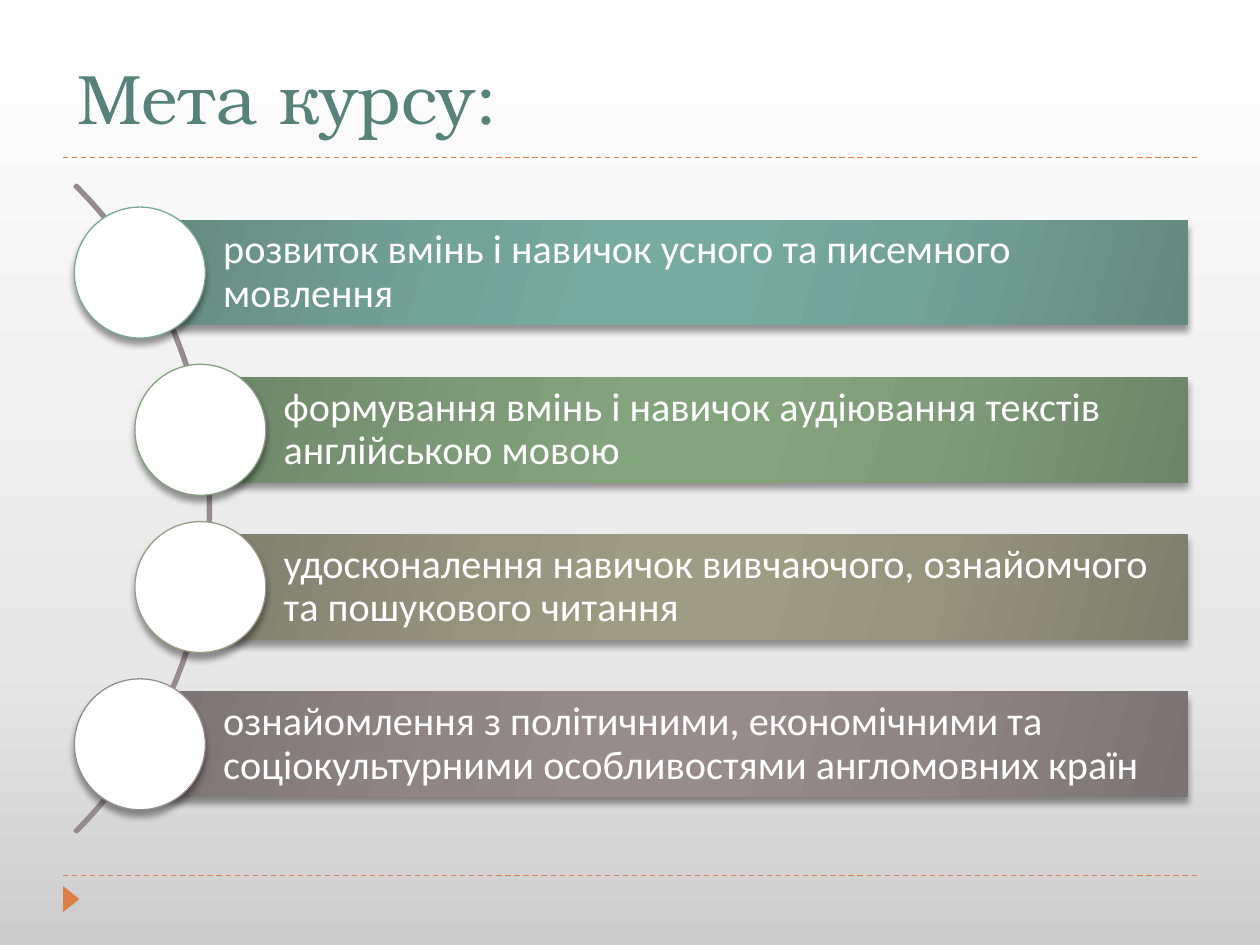
from dataclasses import dataclass

from lxml.etree import SubElement
from pptx import Presentation
from pptx.dml.color import RGBColor
from pptx.enum.dml import MSO_LINE
from pptx.enum.shapes import MSO_CONNECTOR, MSO_SHAPE
from pptx.enum.text import MSO_ANCHOR, MSO_AUTO_SIZE, PP_ALIGN
from pptx.oxml.ns import qn
from pptx.util import Cm, Pt

COLORS = {
    "title": "578279",
    "accent": "DD8047",
    "arc": "968C8C",
    "white": "FFFFFF",
    "shadow": "000000",
}
PAGE_STOPS = {0: "CCCCCC", 30: "E7E7E7", 100: "FFFFFF"}

# Lengths in centimetres
BAR_RIGHT, BAR_TOP, BAR_HEIGHT, BAR_PITCH = 23.95, 4.44, 2.11, 3.17
CIRCLE_SIZE = 2.64
OUTER_LEFT, INNER_LEFT = 2.82, 4.04


@dataclass
class Goal:
    text: str
    left: float
    edge: str
    middle: str
    center: str
    outline: str


GOALS = [
    Goal("розвиток вмінь і навичок усного та писемного мовлення",
         OUTER_LEFT, "658980", "73A297", "77AB9F", "7BA79D"),
    Goal("формування вмінь і навичок аудіювання текстів англійською мовою",
         INNER_LEFT, "6D8469", "7F9C79", "84A47E", "86A181"),
    Goal("удосконалення навичок вивчаючого, ознайомчого та пошукового читання",
         INNER_LEFT, "7F7E6E", "96947F", "9E9C84", "9C9A86"),
    Goal("ознайомлення з політичними, економічними та соціокультурними "
         "особливостями англомовних країн",
         OUTER_LEFT, "7B7373", "908585", "978B8B", "968C8C"),
]


def rgb(value: str) -> RGBColor:
    return RGBColor.from_string(value)


def apply_format(target, values: dict) -> None:
    for name, value in values.items():
        setattr(target, name, value)


def set_gradient(fill, owner, stops: dict, angle: int) -> None:
    fill.gradient()
    gradient = owner.xpath(".//a:gradFill")[0]
    stop_list = gradient.find(qn("a:gsLst"))
    for stop in list(stop_list):
        stop_list.remove(stop)
    for position, color in stops.items():
        stop = SubElement(stop_list, qn("a:gs"), pos=str(position * 1000))
        SubElement(stop, qn("a:srgbClr"), val=color)
    gradient.find(qn("a:lin")).set("ang", str(angle * 60000))


def add_shadow(shape) -> None:
    effects = shape._element.spPr.find(qn("a:effectLst"))
    shadow = SubElement(effects, qn("a:outerShdw"), blurRad=str(Pt(4)),
                        dist=str(Pt(3.4)), dir="5400000", rotWithShape="0")
    color = SubElement(shadow, qn("a:srgbClr"), val=COLORS["shadow"])
    SubElement(color, qn("a:alpha"), val="40000")


def add_plain_shape(page, kind, left: float, top: float, width: float, height: float,
                    fill: str = "", line: str = "", weight: float = 0.75):
    shape = page.shapes.add_shape(kind, Cm(left), Cm(top), Cm(width), Cm(height))
    shape.shadow.inherit = False
    if fill:
        shape.fill.solid()
        shape.fill.fore_color.rgb = rgb(fill)
    else:
        shape.fill.background()
    if line:
        shape.line.color.rgb = rgb(line)
        shape.line.width = Pt(weight)
    else:
        shape.line.fill.background()
    return shape


def add_rule(page, top: float) -> None:
    rule = page.shapes.add_connector(
        MSO_CONNECTOR.STRAIGHT, Cm(1.27), Cm(top), Cm(24.13), Cm(top))
    rule.line.color.rgb = rgb(COLORS["accent"])
    apply_format(rule.line, {"width": Pt(0.75), "dash_style": MSO_LINE.DASH})
    SubElement(rule._element.spPr, qn("a:effectLst"))


def write_text(frame, text: str, frame_format: dict, font_format: dict, color: str):
    apply_format(frame, {"word_wrap": True, "auto_size": MSO_AUTO_SIZE.NONE,
                         **frame_format})
    para = frame.paragraphs[0]
    para.alignment = PP_ALIGN.LEFT
    span = para.add_run()
    span.text = text
    apply_format(span.font, font_format)
    span.font.color.rgb = rgb(color)
    return para


def add_goal(page, goal: Goal, top: float) -> None:
    bar = add_plain_shape(page, MSO_SHAPE.RECTANGLE, goal.left, top,
                          BAR_RIGHT - goal.left, BAR_HEIGHT)
    stops = {0: goal.edge, 30: goal.middle, 45: goal.center,
             55: goal.center, 73: goal.middle, 100: goal.edge}
    set_gradient(bar.fill, bar._element, stops, 16)
    add_shadow(bar)
    para = write_text(
        bar.text_frame, goal.text,
        {"vertical_anchor": MSO_ANCHOR.MIDDLE, "margin_left": Cm(1.68),
         "margin_right": Cm(0.15), "margin_top": Cm(0.15), "margin_bottom": Cm(0.15)},
        {"name": "Calibri", "size": Pt(23)}, COLORS["white"])
    para.line_spacing = 0.9

    # Circle centred on the left edge of the bar
    circle = add_plain_shape(
        page, MSO_SHAPE.OVAL, goal.left - CIRCLE_SIZE / 2,
        top + (BAR_HEIGHT - CIRCLE_SIZE) / 2, CIRCLE_SIZE, CIRCLE_SIZE,
        COLORS["white"], goal.outline)
    add_shadow(circle)


def main() -> None:
    deck = Presentation()
    apply_format(deck, {"slide_width": Cm(25.4), "slide_height": Cm(19.05)})
    page = deck.slides.add_slide(deck.slide_layouts[5])
    set_gradient(page.background.fill, page.element, PAGE_STOPS, 270)

    # Title
    title = page.shapes.title
    apply_format(title, {"left": Cm(1.3), "top": Cm(0.91),
                         "width": Cm(22.86), "height": Cm(2.01)})
    write_text(title.text_frame, "Мета курсу:",
               {"vertical_anchor": MSO_ANCHOR.BOTTOM},
               {"name": "TeX Gyre Bonum", "size": Pt(40)}, COLORS["title"])

    # Dashed rules and corner marker
    for top in (3.17, 17.65):
        add_rule(page, top)
    marker = add_plain_shape(page, MSO_SHAPE.ISOSCELES_TRIANGLE,
                             1.17, 17.96, 0.53, 0.33, COLORS["accent"])
    marker.rotation = 90

    # Arc behind the goals
    arc = add_plain_shape(page, MSO_SHAPE.BLOCK_ARC, -14.22, 1.02, 18.47, 18.47,
                          line=COLORS["arc"], weight=1.5)
    for index, value in enumerate((189, 27, 0.003)):
        arc.adjustments[index] = value

    # Goals
    for index, goal in enumerate(GOALS):
        add_goal(page, goal, BAR_TOP + index * BAR_PITCH)

    deck.save("out.pptx")


if __name__ == "__main__":
    main()
